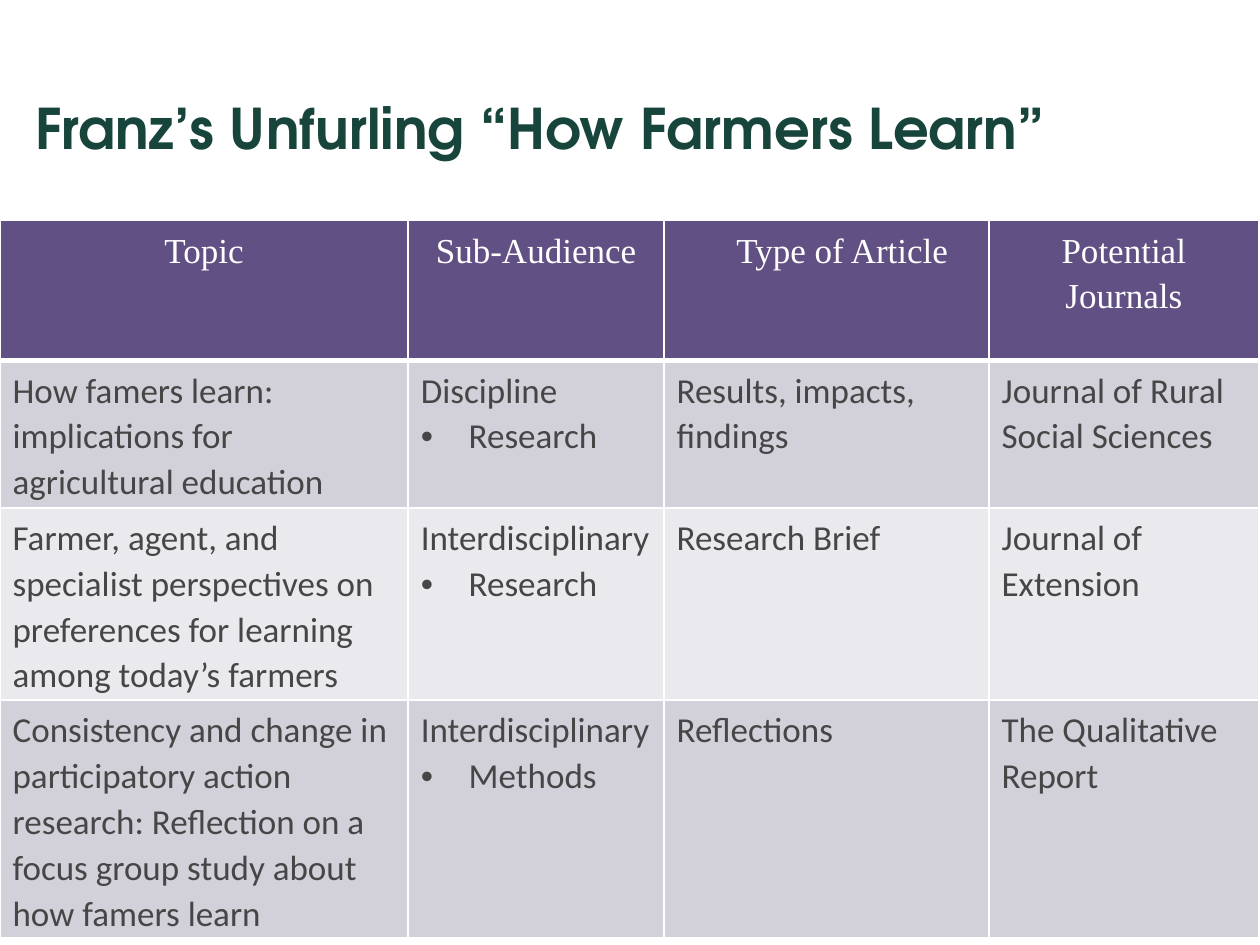
import pptx
import pptx.dml.color
import pptx.enum.text
import pptx.oxml.ns
import pptx.util
from lxml import etree

Inches = pptx.util.Inches
Pt = pptx.util.Pt
RGBColor = pptx.dml.color.RGBColor
ALIGN = pptx.enum.text.PP_ALIGN
ANCHOR = pptx.enum.text.MSO_ANCHOR
qn = pptx.oxml.ns.qn

GREEN = RGBColor(0x18, 0x45, 0x3B)
PURPLE = RGBColor(0x61, 0x50, 0x83)
LILAC = RGBColor(0xD2, 0xD0, 0xD9)
PALE = RGBColor(0xEA, 0xE9, 0xED)
GRAY = RGBColor(0x46, 0x46, 0x46)
WHITE = RGBColor(0xFF, 0xFF, 0xFF)

TITLE_FONT = {"name": "TeX Gyre Adventor", "size": Pt(32), "bold": True, "color": GREEN}
HEAD_FONT = {"name": "Times New Roman", "size": Pt(20), "bold": False, "color": WHITE}
BODY_FONT = {"name": "Calibri", "size": Pt(20), "bold": False, "color": GRAY}
HEAD_PARA = {"alignment": ALIGN.CENTER, "line_spacing": 1.15}
BODY_PARA = {"alignment": ALIGN.LEFT, "line_spacing": 1.07}

BULLET = "• "
COLUMN_WIDTHS = [3.24, 2.03, 2.58, 2.14]
ROW_HEIGHTS = [1.11, 1.12, 1.12, 1.12]

# Each cell is a list of paragraphs
HEADINGS = [["Topic"], ["Sub-Audience"], ["Type of Article"], ["Potential", "Journals"]]
ARTICLES = [
    [["How famers learn: implications for agricultural education"],
     ["Discipline", BULLET + "Research"],
     ["Results, impacts, findings"],
     ["Journal of Rural Social Sciences"]],
    [["Farmer, agent, and specialist perspectives on preferences for learning "
      "among today’s farmers"],
     ["Interdisciplinary", BULLET + "Research"],
     ["Research Brief"],
     ["Journal of Extension"]],
    [["Consistency and change in participatory action research: Reflection on a "
      "focus group study about how famers learn"],
     ["Interdisciplinary", BULLET + "Methods"],
     ["Reflections"],
     ["The Qualitative Report"]],
]


def set_font(span, font_format):
    for name, value in font_format.items():
        if name == "color":
            span.font.color.rgb = value
        else:
            setattr(span.font, name, value)


def add_bullet(para):
    properties = para._p.get_or_add_pPr()
    properties.set("marL", str(Inches(0.38)))
    properties.set("indent", str(-Inches(0.38)))
    etree.SubElement(properties, qn("a:buFont"), typeface="Arial")
    etree.SubElement(properties, qn("a:buChar"), char=BULLET.strip())


def add_borders(cell, widths):
    properties = cell._tc.get_or_add_tcPr()
    for side, width in widths.items():
        line = etree.SubElement(properties, qn(f"a:ln{side}"), w=str(Pt(width)))
        fill = etree.SubElement(line, qn("a:solidFill"))
        etree.SubElement(fill, qn("a:srgbClr"), val=str(WHITE))


def fill_cell(cell, lines, color, font_format, para_format, bottom=1):
    add_borders(cell, {"L": 1, "R": 1, "T": 1, "B": bottom})
    cell.fill.solid()
    cell.fill.fore_color.rgb = color
    frame = cell.text_frame
    for index, line in enumerate(lines):
        para = frame.add_paragraph() if index else frame.paragraphs[0]
        if line.startswith(BULLET):
            add_bullet(para)
        for name, value in para_format.items():
            setattr(para, name, value)
        span = para.add_run()
        span.text = line.removeprefix(BULLET)
        set_font(span, font_format)


def add_title(page, text):
    box = page.shapes.add_textbox(Inches(0.18), Inches(0.67), Inches(9), Inches(0.67))
    frame = box.text_frame
    frame.word_wrap = True
    frame.vertical_anchor = ANCHOR.MIDDLE
    span = frame.paragraphs[0].add_run()
    span.text = text
    set_font(span, TITLE_FONT)


def add_article_table(page):
    table = page.shapes.add_table(
        len(ROW_HEIGHTS), len(COLUMN_WIDTHS), Inches(0), Inches(1.75),
        Inches(sum(COLUMN_WIDTHS)), Inches(sum(ROW_HEIGHTS))).table
    for column, width in zip(table.columns, COLUMN_WIDTHS):
        column.width = Inches(width)
    for row, height in zip(table.rows, ROW_HEIGHTS):
        row.height = Inches(height)

    # Header row, with the third heading indented
    for column, lines in enumerate(HEADINGS):
        fill_cell(table.cell(0, column), lines, PURPLE, HEAD_FONT, HEAD_PARA, bottom=3)
    indented = table.cell(0, 2).text_frame.paragraphs[0]
    indented._p.get_or_add_pPr().set("marL", str(Inches(0.25)))

    # Body rows in alternating shades
    for row, article in enumerate(ARTICLES, start=1):
        shade = LILAC if row % 2 else PALE
        for column, lines in enumerate(article):
            fill_cell(table.cell(row, column), lines, shade, BODY_FONT, BODY_PARA)


def main():
    deck = pptx.Presentation()
    deck.slide_width = Inches(10)
    deck.slide_height = Inches(7.5)
    page = deck.slides.add_slide(deck.slide_layouts[6])
    add_title(page, "Franz’s Unfurling “How Farmers Learn”")
    add_article_table(page)
    deck.save("out.pptx")


if __name__ == "__main__":
    main()
